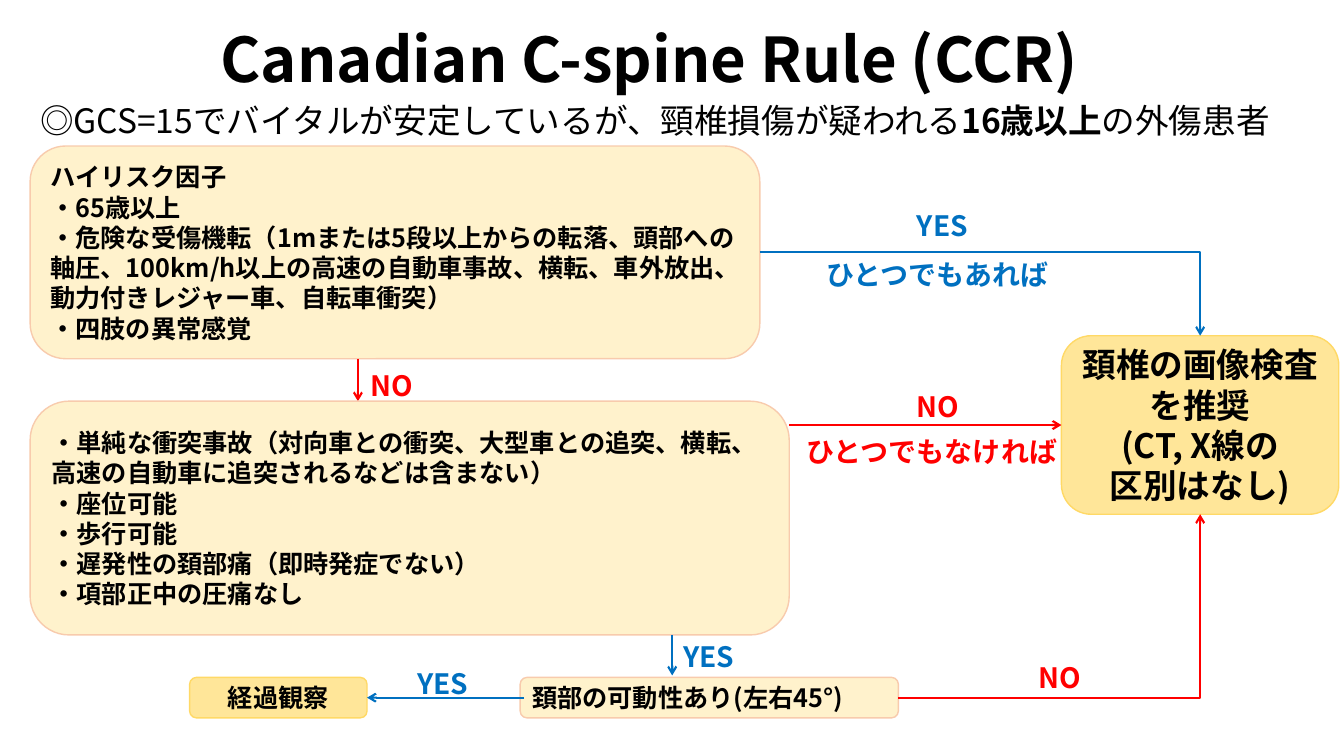
import collections

import pptx
import pptx.dml.color
import pptx.enum.lang
import pptx.enum.shapes
import pptx.enum.text
import pptx.oxml
import pptx.oxml.ns
import pptx.util

Cm = pptx.util.Cm
RGBColor = pptx.dml.color.RGBColor
ALIGN = pptx.enum.text.PP_ALIGN
ANCHOR = pptx.enum.text.MSO_ANCHOR
CONNECTOR = pptx.enum.shapes.MSO_CONNECTOR
qn = pptx.oxml.ns.qn

FONT = "Noto Sans CJK JP"
BLACK = RGBColor(0x00, 0x00, 0x00)
YES_BLUE = RGBColor(0x00, 0x70, 0xC0)
NO_RED = RGBColor(0xFF, 0x00, 0x00)
CREAM = RGBColor(0xFF, 0xF2, 0xCC)
PEACH = RGBColor(0xF8, 0xCB, 0xAD)
GOLD = RGBColor(0xFF, 0xE6, 0x99)
AMBER = RGBColor(0xFF, 0xD9, 0x66)

Box = collections.namedtuple("Box", "left top width height")

# All boxes in centimetres
HEADER = Box(0.76, 0.41, 33.4, 3.25)
HIGH_RISK = Box(0.76, 3.68, 18.39, 5.36)
LOW_RISK = Box(0.76, 10.11, 19.13, 5.89)
MOBILITY = Box(13.11, 17.07, 9.53, 1.02)
OBSERVATION = Box(4.78, 17.07, 4.47, 1.02)
IMAGING = Box(26.75, 8.46, 6.99, 4.5)

HIGH_RISK_TEXT = [
    "ハイリスク因子",
    "・65歳以上",
    "・危険な受傷機転（1mまたは5段以上からの転落、頭部への軸圧、"
    "100km/h以上の高速の自動車事故、横転、車外放出、動力付きレジャー車、自転車衝突）",
    "・四肢の異常感覚",
]
LOW_RISK_TEXT = [
    "・単純な衝突事故（対向車との衝突、大型車との追突、横転、"
    "高速の自動車に追突されるなどは含まない）",
    "・座位可能",
    "・歩行可能",
    "・遅発性の頚部痛（即時発症でない）",
    "・項部正中の圧痛なし",
]
IMAGING_TEXT = ["頚椎の画像検査を推奨", "(CT, X線の", "区別はなし)"]


def add_span(para, text, size, color=BLACK, bold=True):
    span = para.add_run()
    span.text = text
    formats = {
        "name": FONT,
        "size": pptx.util.Pt(size),
        "bold": bold,
        "language_id": pptx.enum.lang.MSO_LANGUAGE_ID.JAPANESE,
    }
    for name, value in formats.items():
        setattr(span.font, name, value)
    span.font.color.rgb = color
    east_asian = pptx.oxml.parse_xml(
        f'<a:ea {pptx.oxml.ns.nsdecls("a")} typeface="{FONT}"/>')
    span.font._element.find(qn("a:latin")).addnext(east_asian)


def add_text(page, box, anchor=ANCHOR.TOP, align=ALIGN.LEFT):
    """Add an empty text box and return its first paragraph."""
    frame = page.shapes.add_textbox(*map(Cm, box)).text_frame
    frame.word_wrap = True
    frame.vertical_anchor = anchor
    frame.paragraphs[0].alignment = align
    return frame.paragraphs[0]


def add_label(page, text, color, left, top, width=2.21, align=ALIGN.LEFT):
    add_span(add_text(page, Box(left, top, width, 1.12), align=align), text, 20, color)


def add_step(page, box, lines, fill, edge, size=18, align=ALIGN.LEFT):
    step = page.shapes.add_shape(
        pptx.enum.shapes.MSO_SHAPE.FLOWCHART_ALTERNATE_PROCESS, *map(Cm, box))
    step.shadow.inherit = False
    step.fill.solid()
    step.fill.fore_color.rgb = fill
    step.line.color.rgb = edge
    step.line.width = pptx.util.Pt(1)
    frame = step.text_frame
    frame.word_wrap = True
    frame.vertical_anchor = ANCHOR.MIDDLE
    for index, line in enumerate(lines):
        para = frame.add_paragraph() if index else frame.paragraphs[0]
        para.alignment = align
        add_span(para, line, size)
    return step


def add_arrow(page, start, end, color, bent=False):
    kind = CONNECTOR.ELBOW if bent else CONNECTOR.STRAIGHT
    arrow = page.shapes.add_connector(kind, *map(Cm, start + end))
    arrow.line.color.rgb = color
    arrow.line.width = pptx.util.Pt(1.5)
    properties = arrow._element.spPr
    if bent:  # a single corner
        properties.find(qn("a:prstGeom")).set("prst", "bentConnector2")
    namespace = pptx.oxml.ns.nsdecls("a")
    properties.find(qn("a:ln")).append(
        pptx.oxml.parse_xml(f'<a:tailEnd {namespace} type="arrow"/>'))
    properties.append(pptx.oxml.parse_xml(f"<a:effectLst {namespace}/>"))
    return arrow


def draw_header(page, box):
    subtitle = add_text(page, Box(box.left, box.top + 1.98, box.width, 1.27), ANCHOR.MIDDLE)
    add_span(subtitle, "◎GCS=15でバイタルが安定しているが、頸椎損傷が疑われる", 24, bold=False)
    add_span(subtitle, "16歳以上", 24)
    add_span(subtitle, "の外傷患者", 24, bold=False)
    title = add_text(page, Box(box.left + 4.55, box.top, 23.27, 2.13))
    add_span(title, "Canadian C-spine Rule (CCR)", 44)


def draw_high_risk(page, box, imaging):
    add_step(page, box, HIGH_RISK_TEXT, CREAM, PEACH)
    right, bottom = box.left + box.width, box.top + box.height
    middle = box.top + box.height / 2
    # Any factor present: imaging
    add_arrow(page, (right, middle), (imaging.left + imaging.width / 2, imaging.top),
              YES_BLUE, bent=True)
    add_label(page, "YES", YES_BLUE, right + 3.71, middle - 1.23)
    add_label(page, "ひとつでもあれば", YES_BLUE, right + 1.42, middle, 6.17)
    # None present: next step
    x = box.left + 8.26
    add_arrow(page, (x, bottom), (x, bottom + 1.07), NO_RED)
    add_label(page, "NO", NO_RED, x + 0.07, bottom + 0.13)


def draw_low_risk(page, box, imaging, imaging_step):
    add_step(page, box, LOW_RISK_TEXT, CREAM, PEACH)
    right, bottom = box.left + box.width, box.top + box.height
    # None present: imaging
    y = imaging.top + imaging.height / 2
    add_arrow(page, (right, y), (imaging.left, y), NO_RED).end_connect(imaging_step, 1)
    add_label(page, "NO", NO_RED, right + 2.97, y - 1.01)
    add_label(page, "ひとつでもなければ", NO_RED, right, y + 0.11, 7.19, ALIGN.CENTER)
    # Any present: neck movement
    x = box.left + 16.18
    add_arrow(page, (x, bottom), (x, bottom + 1.02), YES_BLUE)
    add_label(page, "YES", YES_BLUE, x + 0.03, bottom)


def draw_mobility(page, box, imaging, observation):
    add_step(page, box, ["頚部の可動性あり(左右45°)"], CREAM, PEACH)
    observation_step = add_step(page, observation, ["経過観察"], GOLD, AMBER,
                                align=ALIGN.CENTER)
    right, middle = box.left + box.width, box.top + box.height / 2
    # Not able to turn: imaging
    add_arrow(page, (right, middle),
              (imaging.left + imaging.width / 2, imaging.top + imaging.height),
              NO_RED, bent=True)
    add_label(page, "NO", NO_RED, right + 3.29, box.top - 0.56, 2.64)
    # Able to turn: observation
    add_arrow(page, (box.left + 0.1, middle), (observation.left + observation.width, middle),
              YES_BLUE).end_connect(observation_step, 3)
    add_label(page, "YES", YES_BLUE, box.left - 2.85, box.top - 0.41)


def main():
    deck = pptx.Presentation()
    deck.slide_width, deck.slide_height = Cm(33.87), Cm(19.05)
    page = deck.slides.add_slide(deck.slide_layouts[6])
    draw_header(page, HEADER)
    imaging_step = add_step(page, IMAGING, IMAGING_TEXT, GOLD, AMBER, 24, ALIGN.CENTER)
    draw_high_risk(page, HIGH_RISK, IMAGING)
    draw_low_risk(page, LOW_RISK, IMAGING, imaging_step)
    draw_mobility(page, MOBILITY, IMAGING, OBSERVATION)
    deck.save("out.pptx")


if __name__ == "__main__":
    main()
